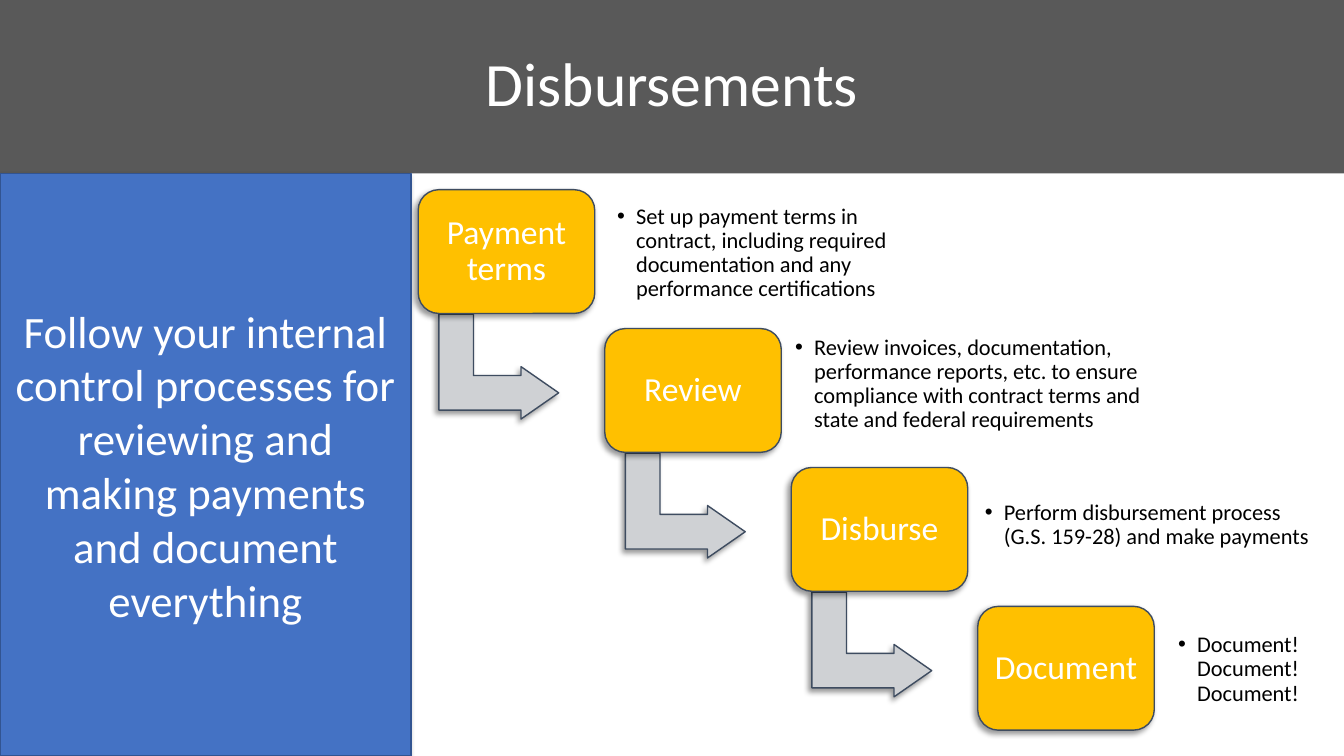
from lxml import etree
from pptx import Presentation
from pptx.dml.color import RGBColor
from pptx.enum import shapes, text
from pptx.oxml import ns
from pptx.util import Cm, Pt

TITLE = "Disbursements"
ASIDE = ("Follow your internal control processes for reviewing and making "
         "payments and document everything")
# label, note, note box (left, top, width) in cm
STEPS = [
    ("Payment terms",
     "Set up payment terms in contract, including required documentation "
     "and any performance certifications", (15.37, 5.13, 7.44)),
    ("Review",
     "Review invoices, documentation, performance reports, etc. to ensure "
     "compliance with contract terms and state and federal requirements",
     (19.86, 8.43, 9.63)),
    ("Disburse",
     "Perform disbursement process\v(G.S. 159-28) and make payments",
     (24.64, 11.99, 9.2)),
    ("Document", "Document! Document! Document!", (29.51, 15.62, 4.06)),
]

WHITE = RGBColor(0xFF, 0xFF, 0xFF)
BLACK = RGBColor(0, 0, 0)
GREY = RGBColor(0x59, 0x59, 0x59)
SILVER = RGBColor(0xCF, 0xD1, 0xD4)
GOLD = RGBColor(0xFF, 0xC0, 0x00)
SLATE = RGBColor(0x3E, 0x4C, 0x60)
BLUE = RGBColor(0x44, 0x72, 0xC4)
NAVY = RGBColor(0x32, 0x54, 0x91)

WIDE, HIGH = 33.87, 19.05
BAND = 4.37
LEFT, TOP = 10.54, 4.78
STEP_X, STEP_Y = 4.7, 3.5
CARD_W, CARD_H = 4.45, 3.12
NOTE_H = 2.51
CENTER, PLAIN = text.PP_ALIGN.CENTER, text.PP_ALIGN.LEFT
KIND = shapes.MSO_SHAPE


def add_sub(parent, tag, **attrs):
    return etree.SubElement(parent, ns.qn(tag), attrs)


def draw(kind, box, fill, line=None):
    """Add a filled shape; an outlined one also casts a soft shadow."""
    shape = slide.shapes.add_shape(kind, *map(Cm, box))
    shape.fill.solid()
    shape.fill.fore_color.rgb = fill
    shape.shadow.inherit = False
    if line is None:
        shape.line.fill.background()
        return shape
    shape.line.color.rgb = line
    shape.line.width = Pt(1)
    effects = shape._element.spPr.find(ns.qn("a:effectLst"))
    shade = add_sub(effects, "a:outerShdw", blurRad=str(Pt(4)),
                    dist=str(Pt(3)), dir="8100000", rotWithShape="0")
    color = add_sub(shade, "a:srgbClr", val="000000")
    add_sub(color, "a:alpha", val="40000")
    return shape


def write(shape, words, size, color, align=CENTER, inset=0.25, space=0.9):
    frame = shape.text_frame
    frame.text = words
    frame.word_wrap = True
    frame.auto_size = text.MSO_AUTO_SIZE.NONE
    frame.vertical_anchor = text.MSO_ANCHOR.MIDDLE
    frame.margin_left = frame.margin_right = Cm(inset)
    frame.margin_top = frame.margin_bottom = Cm(min(inset, 0.25))
    para = frame.paragraphs[0]
    para.alignment = align
    para.line_spacing = space
    for run in para.runs:
        run.font.name = "Calibri"
        run.font.size = Pt(size)
        run.font.color.rgb = color
    return para


def add_note(words, box):
    left, top, width = box
    note = slide.shapes.add_textbox(Cm(left), Cm(top), Cm(width), Cm(NOTE_H))
    para = write(note, words, 16, BLACK, PLAIN, 0.18)
    props = para._p.get_or_add_pPr()
    props.set("marL", str(Cm(0.48)))
    props.set("indent", str(-Cm(0.48)))
    add_sub(props, "a:buFont", typeface="Arial")
    add_sub(props, "a:buChar", char="•")


deck = Presentation()
deck.slide_width, deck.slide_height = Cm(WIDE), Cm(HIGH)
slide = deck.slides.add_slide(deck.slide_layouts[5])

band = draw(KIND.RECTANGLE, (0, 0, WIDE, BAND), GREY)
slide.shapes._spTree.insert(2, band._element)
title = slide.shapes.title
title.left, title.top = Cm(2.33), Cm(0.33)
title.width, title.height = Cm(29.21), Cm(3.68)
write(title, TITLE, 44, WHITE)

for i, (label, note, box) in enumerate(STEPS):
    x, y = LEFT + i * STEP_X, TOP + i * STEP_Y
    if i < len(STEPS) - 1:
        arrow = draw(KIND.BENT_UP_ARROW, (x + 0.71, y + 2.95, 2.64, 3.02),
                     SILVER, SLATE)
        arrow.rotation = 90
        for j, value in enumerate((0.33, 0.25, 0.36)):
            arrow.adjustments[j] = value
    card = draw(KIND.ROUNDED_RECTANGLE, (x, y, CARD_W, CARD_H), GOLD, SLATE)
    write(card, label, 24, WHITE)
    add_note(note, box)

aside = draw(KIND.RECTANGLE, (0, BAND, 10.36, HIGH - BAND), BLUE, NAVY)
write(aside, ASIDE, 32, WHITE, space=1.0)

deck.save("out.pptx")
